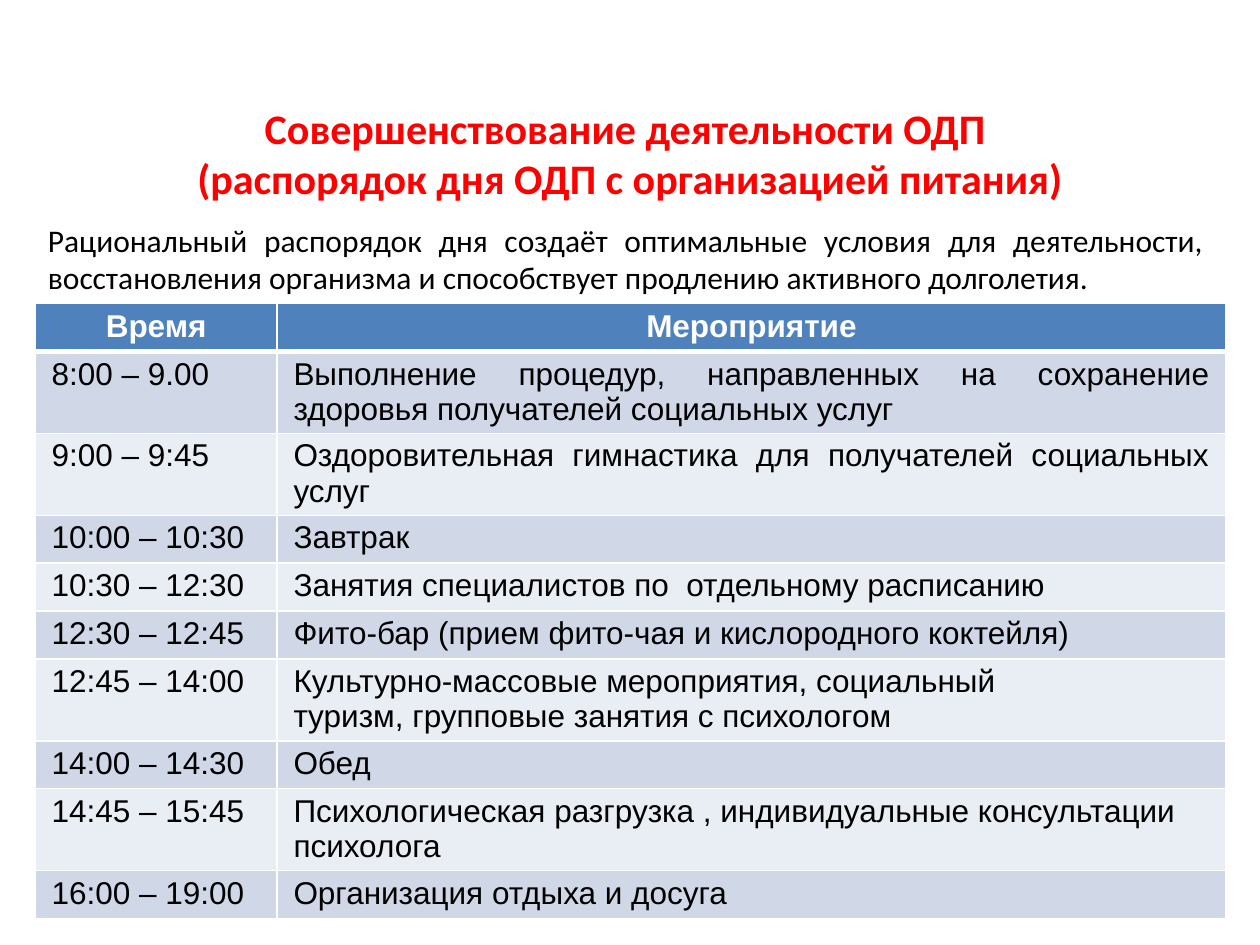
from lxml.etree import SubElement
from pptx import Presentation
from pptx.dml.color import RGBColor
from pptx.enum.text import MSO_ANCHOR, MSO_AUTO_SIZE, PP_ALIGN
from pptx.oxml.ns import qn
from pptx.util import Inches, Pt

RED = RGBColor(0xFF, 0x00, 0x00)
BLACK = RGBColor(0x00, 0x00, 0x00)
WHITE = RGBColor(0xFF, 0xFF, 0xFF)
HEADER = RGBColor(0x4F, 0x81, 0xBD)
BAND_DARK = RGBColor(0xD0, 0xD8, 0xE8)
BAND_LIGHT = RGBColor(0xE9, 0xED, 0xF4)

LEFT = PP_ALIGN.LEFT
CENTER = PP_ALIGN.CENTER
JUSTIFY = PP_ALIGN.JUSTIFY

MARGIN = 0.28
COLUMNS = [1.92, 7.53]
LINE_HEIGHT = 0.27
ROW_PADDING = 0.11

TITLE = [
    "Совершенствование деятельности ОДП ",
    "(распорядок дня ОДП с организацией питания)",
]
INTRO = [
    "Рациональный распорядок дня создаёт оптимальные условия для деятельности, "
    "восстановления организма и способствует продлению активного долголетия."
]
SCHEDULE = [
    ("8:00 – 9.00", ["Выполнение процедур, направленных на сохранение "
                     "здоровья получателей социальных услуг"], JUSTIFY, 2),
    ("9:00 – 9:45", ["Оздоровительная гимнастика для получателей "
                     "социальных услуг"], JUSTIFY, 2),
    ("10:00 – 10:30", ["Завтрак"], LEFT, 1),
    ("10:30 – 12:30", ["Занятия специалистов по  отдельному расписанию"], LEFT, 1),
    ("12:30 – 12:45", ["Фито-бар (прием фито-чая и кислородного коктейля)"], JUSTIFY, 1),
    ("12:45 – 14:00", ["Культурно-массовые мероприятия, социальный",
                       "туризм, групповые занятия с психологом"], JUSTIFY, 2),
    ("14:00 – 14:30", ["Обед"], LEFT, 1),
    ("14:45 – 15:45", ["Психологическая разгрузка , индивидуальные "
                       "консультации психолога"], LEFT, 2),
    ("16:00 – 19:00", ["Организация отдыха и досуга"], LEFT, 1),
]


def write_text(tf, lines, align, font, size, color, bold=False):
    for i, line in enumerate(lines):
        p = tf.paragraphs[0] if i == 0 else tf.add_paragraph()
        p.alignment = align
        p.space_before = Pt(0)
        r = p.add_run()
        r.text = line
        r.font.name = font
        r.font.size = Pt(size)
        r.font.bold = bold
        r.font.color.rgb = color


def fill_placeholder(sp, box, lines, align, size, color, bold=False):
    sp.left, sp.top, sp.width, sp.height = [Inches(v) for v in box]
    tf = sp.text_frame
    tf.word_wrap = True
    tf.auto_size = MSO_AUTO_SIZE.NONE
    tf.vertical_anchor = MSO_ANCHOR.TOP
    write_text(tf, lines, align, "Calibri", size, color, bold)


def remove_bullets(tf):
    for p in tf.paragraphs:
        pPr = p._p.get_or_add_pPr()
        pPr.set("marL", "0")
        pPr.set("indent", "0")
        SubElement(pPr, qn("a:buNone"))


def set_borders(cell, bottom):
    tcPr = cell._tc.get_or_add_tcPr()
    for i, (side, width) in enumerate(zip("LRTB", (1, 1, 1, bottom))):
        ln = SubElement(tcPr, qn(f"a:ln{side}"), w=str(Pt(width)))
        fill = SubElement(ln, qn("a:solidFill"))
        SubElement(fill, qn("a:srgbClr"), val=str(WHITE))
        tcPr.insert(i, ln)


def fill_cell(cell, lines, align, fill, color=BLACK, bold=False, bottom=1):
    cell.margin_left = cell.margin_right = Inches(0.13)
    cell.margin_top = cell.margin_bottom = Inches(0.04)
    cell.fill.solid()
    cell.fill.fore_color.rgb = fill
    set_borders(cell, bottom)
    write_text(cell.text_frame, lines, align, "Arial", 18, color, bold)


def add_schedule(slide):
    heights = [ROW_PADDING + LINE_HEIGHT * n for n in [1] + [row[3] for row in SCHEDULE]]
    table = slide.shapes.add_table(
        len(heights), len(COLUMNS), Inches(MARGIN), Inches(2.41),
        Inches(sum(COLUMNS)), Inches(sum(heights))).table
    for column, width in zip(table.columns, COLUMNS):
        column.width = Inches(width)
    for row, height in zip(table.rows, heights):
        row.height = Inches(height)
    for c, heading in enumerate(["Время", "Мероприятие"]):
        fill_cell(table.cell(0, c), [heading], CENTER, HEADER, WHITE, True, 3)
    for i, (time, activity, align, _) in enumerate(SCHEDULE, 1):
        band = BAND_DARK if i % 2 else BAND_LIGHT
        fill_cell(table.cell(i, 0), [time], LEFT, band)
        fill_cell(table.cell(i, 1), activity, align, band)


def main():
    prs = Presentation()
    prs.slide_width, prs.slide_height = Inches(10), Inches(7.5)
    slide = prs.slides.add_slide(prs.slide_layouts[1])
    title, body = slide.placeholders
    add_schedule(slide)
    fill_placeholder(title, (0, 0.76, 10, 0.91), TITLE, CENTER, 24, RED, True)
    fill_placeholder(body, (MARGIN, 1.7, 9.37, 0.87), INTRO, JUSTIFY, 18, BLACK)
    remove_bullets(body.text_frame)
    prs.save("out.pptx")


if __name__ == "__main__":
    main()
